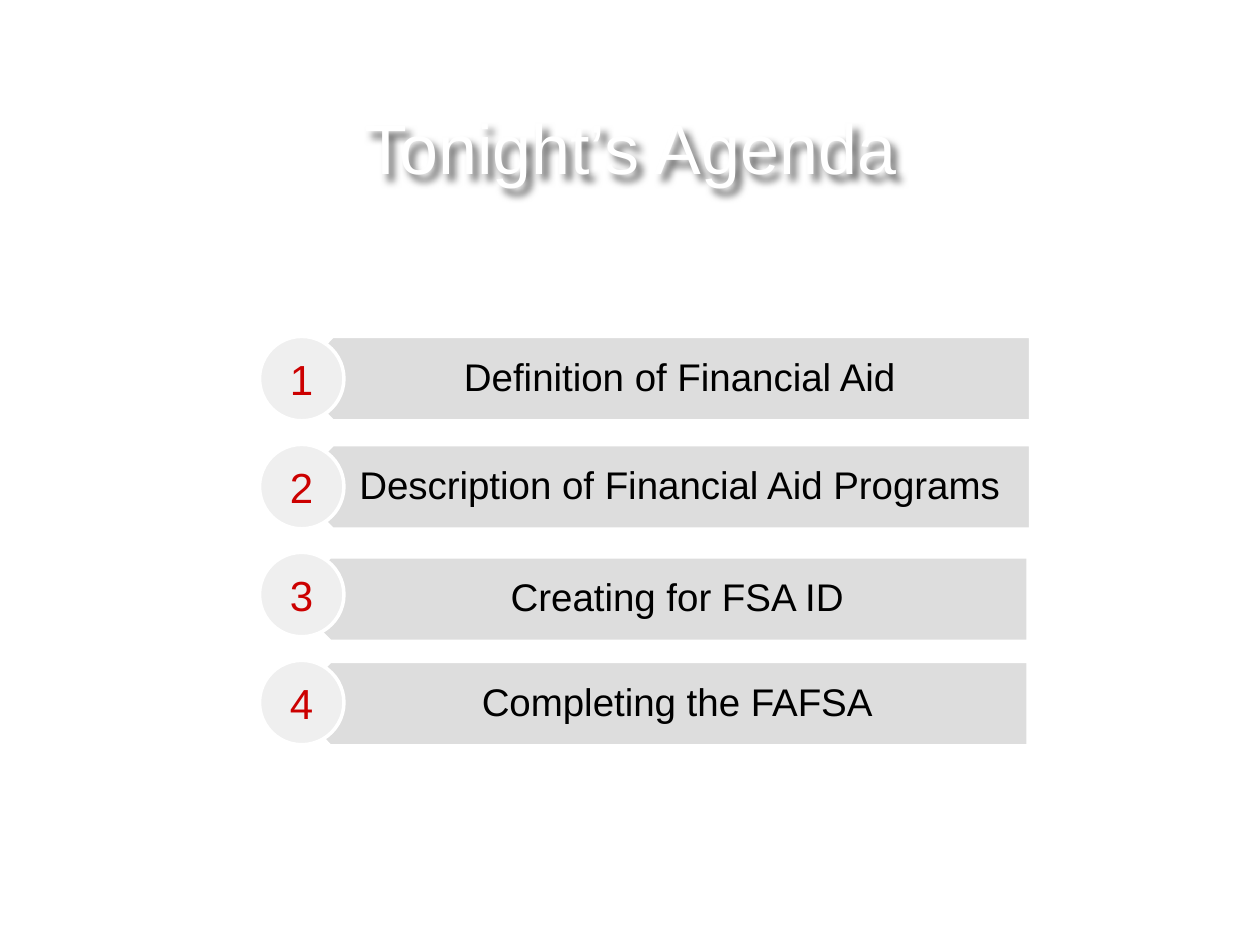
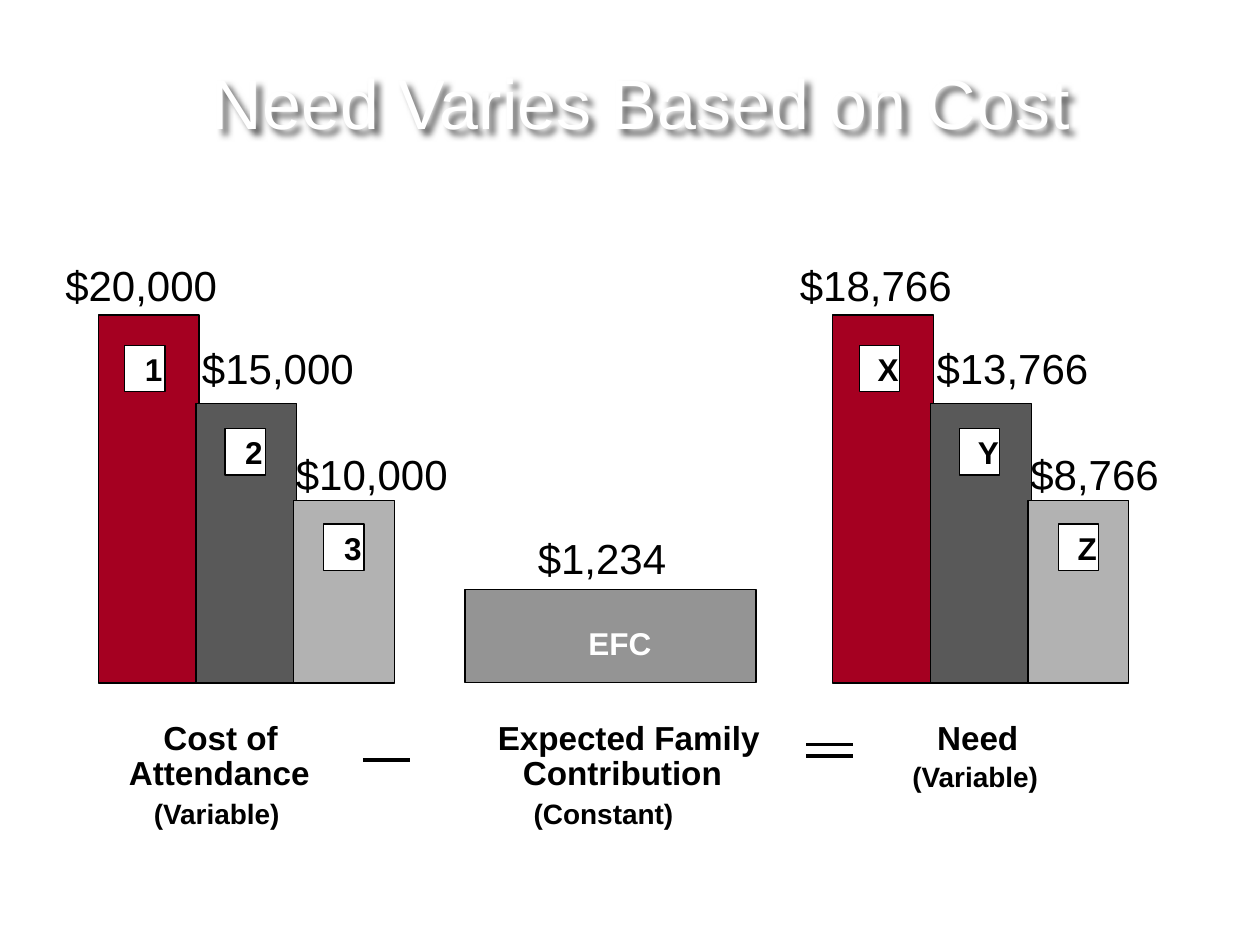
"""Build the financial aid agenda and need comparison slides."""
import pptx
import pptx.dml.color
import pptx.enum.shapes
import pptx.enum.text
import pptx.oxml
import pptx.oxml.ns
import pptx.util
from pptx.util import Inches

RGBColor = pptx.dml.color.RGBColor
ALIGN = pptx.enum.text.PP_ALIGN
MIDDLE = pptx.enum.text.MSO_ANCHOR.MIDDLE
SHAPE = pptx.enum.shapes.MSO_SHAPE

FONT = "Arial"
WHITE = RGBColor(0xFF, 0xFF, 0xFF)
BLACK = RGBColor(0x00, 0x00, 0x00)
BAND_GRAY = RGBColor(0xDD, 0xDD, 0xDD)
CIRCLE_GRAY = RGBColor(0xEF, 0xEF, 0xEF)
NUMBER_RED = RGBColor(0xCC, 0x00, 0x00)
CRIMSON = RGBColor(0xA5, 0x00, 0x21)
DARK_GRAY = RGBColor(0x59, 0x59, 0x59)
LIGHT_GRAY = RGBColor(0xB2, 0xB2, 0xB2)
EFC_GRAY = RGBColor(0x94, 0x94, 0x94)

TITLE_SHADOW = (
    '<a:outerShdw %s blurRad="50800" dist="50800" dir="2700000" algn="tl">'
    '<a:srgbClr val="000000"><a:alpha val="60000"/></a:srgbClr></a:outerShdw>'
    % pptx.oxml.ns.nsdecls("a")
)

AGENDA = [
    ("Definition of Financial Aid", 2.31, 2.67),
    ("Description of Financial Aid Programs", 2.31, 3.53),
    ("Creating for FSA ID", 2.29, 4.42),
    ("Completing the FAFSA", 2.29, 5.25),
]
BAND_WIDTH, BAND_HEIGHT, BAND_TIP = 5.87, 0.67, 0.33
CIRCLE_TOP, CIRCLE_PITCH = 2.67, 0.857

BASELINE = 5.42
BAR_WIDTH, BAR_PITCH = 0.8, 0.775
# Colour, bar top, badge offset (left, top), amount offset (left, top).
BARS = [
    (CRIMSON, 2.5, (0.21, 0.24), (-0.36, -0.49)),
    (DARK_GRAY, 3.2, (0.23, 0.2), (-0.05, -0.53)),
    (LIGHT_GRAY, 3.97, (0.24, 0.19), (-0.08, -0.46)),
]
CAPTIONS = [
    ("Cost of", 1.75, 5.69, 19),
    ("Attendance", 1.74, 5.97, 19),
    ("(Variable)", 1.72, 6.32, 16),
    ("Expected Family", 4.99, 5.69, 19),
    ("Contribution", 4.94, 5.97, 19),
    ("(Constant)", 4.79, 6.32, 16),
    ("Need", 7.76, 5.69, 19),
    ("(Variable)", 7.74, 6.03, 16),
]


def write(shape, text, size, color, bold=False, align=ALIGN.CENTER):
    """Put one formatted paragraph in a shape and return the paragraph."""
    shape.text_frame.word_wrap = True
    paragraph = shape.text_frame.paragraphs[0]
    paragraph.text = text
    paragraph.alignment = align
    font = paragraph.font
    font.name, font.size, font.bold = FONT, pptx.util.Pt(size), bold
    font.color.rgb = color
    return paragraph


def set_insets(frame, left, top, right, bottom):
    """Set the inner margins of a text frame in inches."""
    frame.margin_left, frame.margin_right = Inches(left), Inches(right)
    frame.margin_top, frame.margin_bottom = Inches(top), Inches(bottom)


def paint(shape, fill, line, width):
    """Give a shape a flat fill and outline."""
    shape.shadow.inherit = False
    shape.fill.solid()
    shape.fill.fore_color.rgb = fill
    shape.line.color.rgb = line
    shape.line.width = pptx.util.Pt(width)


def add_titled_slide(deck, text, left, top, width):
    """Add a slide whose white title casts a soft shadow."""
    slide = deck.slides.add_slide(deck.slide_layouts[5])
    title = slide.shapes.title
    title.left, title.top = Inches(left), Inches(top)
    title.width, title.height = Inches(width), Inches(0.77)
    title.text_frame.auto_size = pptx.enum.text.MSO_AUTO_SIZE.NONE
    title.text_frame.vertical_anchor = MIDDLE
    write(title, text, 40, WHITE)
    title.shadow.inherit = False
    effects = title._element.spPr.find(pptx.oxml.ns.qn("a:effectLst"))
    effects.append(pptx.oxml.parse_xml(TITLE_SHADOW))
    return slide


def add_band(slide, topic, left, top):
    """Add an agenda band with a pointed left end."""
    shoulder, right = left + BAND_TIP, left + BAND_WIDTH
    bottom = top + BAND_HEIGHT
    outline = [(shoulder, bottom), (left, top + BAND_HEIGHT / 2),
               (shoulder, top), (right, top)]
    builder = slide.shapes.build_freeform(Inches(right), Inches(bottom))
    builder.add_line_segments([(Inches(x), Inches(y)) for x, y in outline])
    band = builder.convert_to_shape()
    paint(band, BAND_GRAY, WHITE, 2)
    band.text_frame.vertical_anchor = MIDDLE
    set_insets(band.text_frame, 0.47, 0.09, 0.17, 0.09)
    write(band, topic, 22, BLACK).line_spacing = 0.9


def add_number(slide, number, top):
    """Add a numbered agenda circle."""
    circle = slide.shapes.add_shape(
        SHAPE.OVAL, Inches(2.06), Inches(top), Inches(0.67), Inches(0.67))
    paint(circle, CIRCLE_GRAY, WHITE, 2)
    circle.text_frame.vertical_anchor = MIDDLE
    set_insets(circle.text_frame, 0, 0, 0, 0)
    write(circle, str(number), 24, NUMBER_RED)


def add_block(slide, left, top, width, height, fill):
    """Add a rectangle with a hairline outline."""
    block = slide.shapes.add_shape(
        SHAPE.RECTANGLE, Inches(left), Inches(top), Inches(width), Inches(height))
    paint(block, fill, BLACK, 0)


def add_label(slide, text, center, top, size, color=BLACK):
    """Add a bold label centred on a horizontal position."""
    width = 2.6
    label = slide.shapes.add_textbox(
        Inches(center - width / 2), Inches(top), Inches(width), Inches(0.35))
    set_insets(label.text_frame, 0, 0, 0, 0)
    write(label, text, size, color, bold=True)


def add_amount(slide, amount, left, top):
    """Add a dollar amount above a bar."""
    box = slide.shapes.add_textbox(
        Inches(left), Inches(top), Inches(1.5), Inches(0.5))
    write(box, amount, 24, BLACK, align=ALIGN.LEFT)


def add_bar_cluster(slide, left, marks, amounts):
    """Add three descending bars with badges and amounts."""
    for index, (bar, mark, amount) in enumerate(zip(BARS, marks, amounts)):
        color, top, badge_offset, amount_offset = bar
        bar_left = left + index * BAR_PITCH
        badge_left, badge_top = bar_left + badge_offset[0], top + badge_offset[1]
        add_block(slide, bar_left, top, BAR_WIDTH, BASELINE - top, color)
        add_block(slide, badge_left, badge_top, 0.32, 0.37, WHITE)
        add_label(slide, mark, badge_left + 0.23, badge_top + 0.04, 18)
        add_amount(slide, amount, bar_left + amount_offset[0], top + amount_offset[1])


def add_stroke(slide, left, y):
    """Add one horizontal stroke of a minus or equals sign."""
    stroke = slide.shapes.add_connector(
        pptx.enum.shapes.MSO_CONNECTOR.STRAIGHT,
        Inches(left), Inches(y), Inches(left + 0.37), Inches(y))
    stroke.line.color.rgb = BLACK
    stroke.line.width = pptx.util.Pt(0)
    stroke._element.spPr.append(pptx.oxml.parse_xml(
        "<a:effectLst %s/>" % pptx.oxml.ns.nsdecls("a")))


def build_agenda(deck):
    """Build the agenda slide."""
    slide = add_titled_slide(deck, "Tonight’s Agenda", 0.75, 0.78, 8.5)
    for index, (topic, left, top) in enumerate(AGENDA):
        add_band(slide, topic, left, top)
        add_number(slide, index + 1, CIRCLE_TOP + index * CIRCLE_PITCH)


def build_need(deck):
    """Build the slide that subtracts family contribution from cost."""
    slide = add_titled_slide(deck, "Need Varies Based on Cost", 0.75, 0.42, 8.67)
    add_bar_cluster(slide, 0.78, "123", ["$20,000", "$15,000", "$10,000"])
    add_bar_cluster(slide, 6.61, "XYZ", ["$18,766", "$13,766", "$8,766"])
    add_block(slide, 3.69, 4.68, 2.31, BASELINE - 4.68, EFC_GRAY)
    add_label(slide, "EFC", 4.92, 4.95, 18, WHITE)
    add_amount(slide, "$1,234", 4.17, 4.18)
    for text, center, top, size in CAPTIONS:
        add_label(slide, text, center, top, size)
    for left, y in [(2.88, 6.03), (6.4, 5.91), (6.4, 6.0)]:
        add_stroke(slide, left, y)


def main():
    """Build and save the deck."""
    deck = pptx.Presentation()
    deck.slide_width, deck.slide_height = Inches(10), Inches(7.5)
    build_agenda(deck)
    build_need(deck)
    deck.save("out.pptx")


if __name__ == "__main__":
    main()
